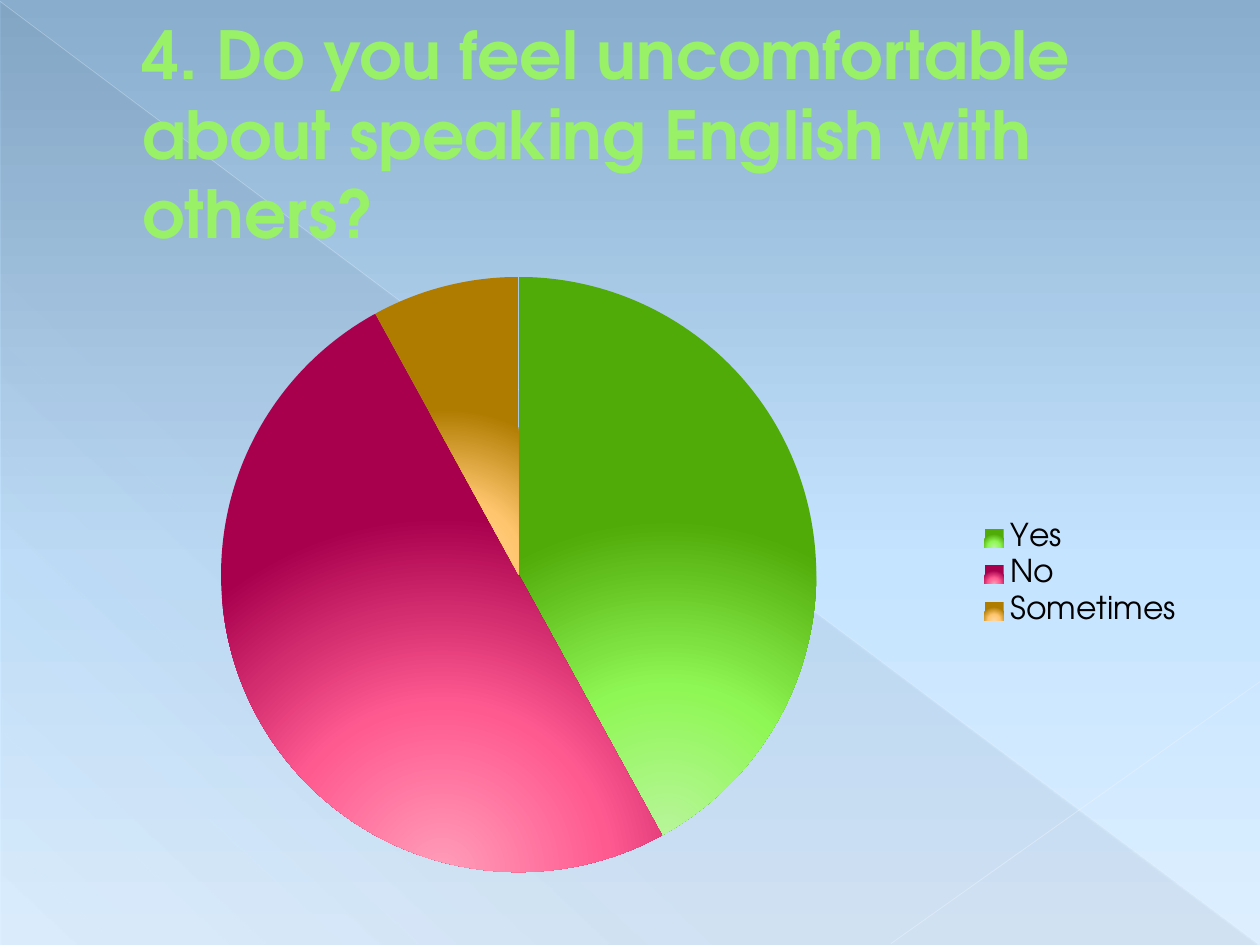
"""Build a survey slide: a question above a pie chart of its answers."""
from dataclasses import dataclass

from pptx import Presentation
from pptx.chart.data import CategoryChartData
from pptx.dml.color import RGBColor
from pptx.enum.chart import XL_CHART_TYPE, XL_LEGEND_POSITION
from pptx.enum.shapes import MSO_CONNECTOR, MSO_SHAPE
from pptx.enum.text import MSO_ANCHOR
from pptx.oxml import parse_xml
from pptx.oxml.ns import nsdecls, qn
from pptx.util import Inches, Pt

PIE = XL_CHART_TYPE.PIE
LEGEND_RIGHT = XL_LEGEND_POSITION.RIGHT
STRAIGHT = MSO_CONNECTOR.STRAIGHT
RIGHT_TRIANGLE = MSO_SHAPE.RIGHT_TRIANGLE
MIDDLE = MSO_ANCHOR.MIDDLE


@dataclass(frozen=True)
class Theme:
    font: str = "TeX Gyre Adventor"
    title_size: float = 37.8
    legend_size: int = 18
    title: str = "98F167"
    title_outline: str = "589129"
    legend: str = "000000"
    sky: tuple = ((0, "88ADCD", 100), (60, "C5E4FF", 100), (100, "DDEFFF", 100))
    shade: tuple = ((0, "4E5B6F", 10), (70, "4E5B6F", 8), (100, "4E5B6F", 1))
    falling_line: str = "EAF5FF"
    rising_line: str = "ECF6FF"


THEME = Theme()
ANSWERS = (
    ("Yes", 42, ("B8F59A", "8FF755", "50AA08")),
    ("No", 50, ("FF9DB9", "FF5A90", "A9004E")),
    ("Sometimes", 8, ("FFD9A0", "FFC56E", "B07C00")),
)
LINEAR = '<a:lin ang="{}" scaled="0"/>'
FROM_BOTTOM = ('<a:path path="circle"><a:fillToRect l="50000" t="100000" '
               'r="50000" b="0"/></a:path>')


def color_xml(color, opacity=100):
    return (f'<a:srgbClr val="{color}"><a:alpha val="{opacity * 1000}"/>'
            '</a:srgbClr>')


def paint_gradient(fill, owner, stops, direction):
    """Give the fill inside the owner element a gradient."""
    fill.gradient()
    plain = owner.find(".//" + qn("a:gradFill"))
    stop_xml = "".join(
        f'<a:gs pos="{position * 1000}">{color_xml(color, opacity)}</a:gs>'
        for position, color, opacity in stops)
    gradient = parse_xml(
        f'<a:gradFill {nsdecls("a")} rotWithShape="1">'
        f'<a:gsLst>{stop_xml}</a:gsLst>{direction}</a:gradFill>')
    plain.getparent().replace(plain, gradient)


def add_shade(slide):
    shade = slide.shapes.add_shape(
        RIGHT_TRIANGLE, Inches(0.01), Inches(0.02), Inches(9.98), Inches(7.48))
    shade.shadow.inherit = False
    shade.line.fill.background()
    paint_gradient(shade.fill, shade._element, THEME.shade,
                   LINEAR.format(133 * 60000))


def add_light_line(slide, start, end, color, width, opacity):
    light = slide.shapes.add_connector(
        STRAIGHT, *(Inches(value) for value in start + end))
    light.line.width = Pt(width)
    light.line.color.rgb = RGBColor.from_string(color)
    tint = light._element.find(".//" + qn("a:srgbClr"))
    tint.append(parse_xml(
        f'<a:alpha {nsdecls("a")} val="{opacity * 1000}"/>'))
    light._element.spPr.append(parse_xml(f'<a:effectLst {nsdecls("a")}/>'))


def add_question(slide, wording):
    question = slide.shapes.add_textbox(
        Inches(0.5), Inches(0.29), Inches(9), Inches(1.53))
    frame = question.text_frame
    frame.word_wrap = True
    frame.vertical_anchor = MIDDLE
    paragraph = frame.paragraphs[0]
    paragraph._p.get_or_add_pPr().set("marL", str(Inches(0.53)))
    run = paragraph.add_run()
    run.text = wording
    run.font.name = THEME.font
    run.font.size = Pt(THEME.title_size)
    run.font.bold = True
    run.font.color.rgb = RGBColor.from_string(THEME.title)
    run.font._element.insert(0, parse_xml(
        f'<a:ln {nsdecls("a")} w="{Pt(0.5)}"><a:solidFill>'
        f'{color_xml(THEME.title_outline)}</a:solidFill></a:ln>'))


def add_answer_pie(slide, answers):
    data = CategoryChartData()
    data.categories = [answer for answer, _, _ in answers]
    data.add_series("Series 1", [share for _, share, _ in answers])
    chart = slide.shapes.add_chart(
        PIE, Inches(0.5), Inches(2.06), Inches(9), Inches(5), data).chart
    chart.has_title = False
    chart.font.name = THEME.font
    chart.font.size = Pt(THEME.legend_size)
    chart.font.color.rgb = RGBColor.from_string(THEME.legend)
    chart.has_legend = True
    chart.legend.position = LEGEND_RIGHT
    chart.legend.include_in_layout = False
    chart.plots[0].vary_by_categories = True
    series = chart.plots[0].series[0]
    for index, (_, _, colors) in enumerate(answers):
        slice_format = series.points[index].format
        slice_format.line.fill.background()
        slice_element = series._element.findall(qn("c:dPt"))[index]
        stops = [(position, color, 100)
                 for position, color in zip((0, 47, 100), colors)]
        paint_gradient(slice_format.fill, slice_element, stops, FROM_BOTTOM)


def main():
    deck = Presentation()
    deck.slide_width, deck.slide_height = Inches(10), Inches(7.5)
    slide = deck.slides.add_slide(deck.slide_layouts[6])
    paint_gradient(slide.background.fill, slide._element, THEME.sky,
                   LINEAR.format(90 * 60000))
    add_shade(slide)
    add_light_line(slide, (0, 0.01), (9.99, 7.49), THEME.falling_line, 0.39, 35)
    add_light_line(slide, (10, 5.41), (7.07, 7.49), THEME.rising_line, 0.47, 45)
    add_question(
        slide, "4. Do you feel uncomfortable about speaking English with others?")
    add_answer_pie(slide, ANSWERS)
    deck.save("out.pptx")


if __name__ == "__main__":
    main()
